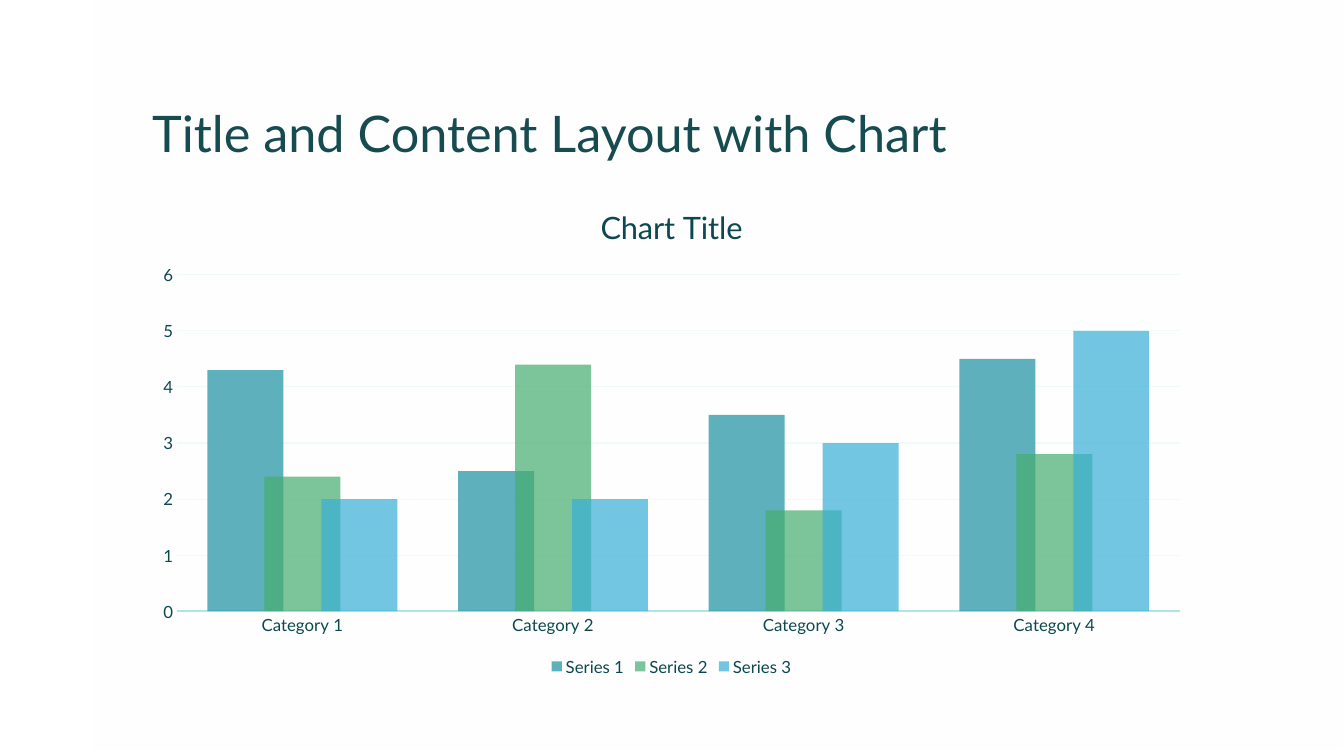
from lxml import etree
from pptx import Presentation
from pptx import util as u
from pptx.chart.data import CategoryChartData
from pptx.dml.color import RGBColor
from pptx.enum import chart as charts, shapes, text
from pptx.oxml.ns import qn

WIDTH, HEIGHT = u.Inches(13.33), u.Inches(7.5)
LEFT, CONTENT_WIDTH = 1.41 / 13.33, 10.5 / 13.33
FONT, TITLE_COLOR, LABEL_COLOR = "Lato", "164B4F", "0D4850"
CATEGORIES = [f"Category {number}" for number in range(1, 5)]
SERIES = [
    ("Series 1", (4.3, 2.5, 3.5, 4.5), "1B91A1"),
    ("Series 2", (2.4, 4.4, 1.8, 2.8), "46AC6F"),
    ("Series 3", (2, 2, 3, 5), "37AFD5"),
]


def color(value):
    return RGBColor.from_string(value)


def box(left, top, width, height):
    return [round(share * side) for share, side in
            zip((left, top, width, height), (WIDTH, HEIGHT) * 2)]


def apply(target, **values):
    for name, value in values.items():
        setattr(target, name, value)


def style_font(font, size, value):
    apply(font, name=FONT, size=u.Pt(size), bold=False)
    font.color.rgb = color(value)


def style_line(line, value, width):
    line.color.rgb = color(value)
    line.width = u.Pt(width)


def set_opacity(color_element, percent):
    alpha = etree.SubElement(color_element, qn("a:alpha"))
    alpha.set("val", str(percent * 1000))


def add_panel(slide):
    panel = slide.shapes.add_shape(
        shapes.MSO_SHAPE.RECTANGLE, *box(0.91 / 13.33, 0, 12.41 / 13.33, 1))
    panel.shadow.inherit = False
    panel.line.fill.background()
    panel.fill.gradient()
    panel.fill.gradient_angle = 270
    for stop, position in zip(panel.fill.gradient_stops, (0, 1)):
        stop.position = position
        stop.color.rgb = color("FFFFFF")
    stop_colors = panel._element.spPr.findall(".//" + qn("a:srgbClr"))
    for stop_color, percent in zip(stop_colors, (60, 0)):
        set_opacity(stop_color, percent)
    slide.shapes._spTree.insert(2, panel._element)


def format_title(title, wording):
    left, top, width, height = box(LEFT, 0.42 / 7.5, CONTENT_WIDTH, 1.25 / 7.5)
    apply(title, left=left, top=top, width=width, height=height)
    frame = title.text_frame
    apply(frame, text=wording, word_wrap=True,
          vertical_anchor=text.MSO_ANCHOR.BOTTOM)
    paragraph = frame.paragraphs[0]
    apply(paragraph, alignment=text.PP_ALIGN.LEFT, line_spacing=0.9)
    style_font(paragraph.runs[0].font, 36, TITLE_COLOR)


def format_axis(axis):
    apply(axis, major_tick_mark=charts.XL_TICK_MARK.NONE,
          minor_tick_mark=charts.XL_TICK_MARK.NONE)
    style_font(axis.tick_labels.font, 12, LABEL_COLOR)


def add_column_chart(slide):
    data = CategoryChartData()
    data.categories = CATEGORIES
    for name, values, _ in SERIES:
        data.add_series(name, values)
    chart = slide.shapes.add_chart(
        charts.XL_CHART_TYPE.COLUMN_CLUSTERED,
        *box(LEFT, 1.83 / 7.5, CONTENT_WIDTH, 4.92 / 7.5), data).chart
    style_font(chart.font, 10, TITLE_COLOR)

    apply(chart, has_title=True, has_legend=True)
    chart.chart_title.include_in_layout = False
    title_frame = chart.chart_title.text_frame
    title_frame.text = "Chart Title"
    style_font(title_frame.paragraphs[0].runs[0].font, 22, LABEL_COLOR)
    apply(chart.legend, position=charts.XL_LEGEND_POSITION.BOTTOM,
          include_in_layout=False)
    style_font(chart.legend.font, 12, LABEL_COLOR)

    for axis in (chart.category_axis, chart.value_axis):
        format_axis(axis)
    style_line(chart.category_axis.format.line, "AFE5E9", 1.25)
    value_axis = chart.value_axis
    apply(value_axis, minimum_scale=0, maximum_scale=6, major_unit=1)
    value_axis.format.line.fill.background()
    style_line(value_axis.major_gridlines.format.line, "EFFAFB", 0.75)

    plot = chart.plots[0]
    apply(plot, gap_width=80, overlap=25, vary_by_categories=False)
    for series, (_, _, value) in zip(plot.series, SERIES):
        series.format.fill.solid()
        series.format.fill.fore_color.rgb = color(value)
        set_opacity(series._element.find(".//" + qn("a:srgbClr")), 70)


def main():
    presentation = Presentation()
    apply(presentation, slide_width=WIDTH, slide_height=HEIGHT)
    slide = presentation.slides.add_slide(presentation.slide_layouts[5])
    slide.background.fill.solid()
    slide.background.fill.fore_color.rgb = color("FFFFFF")
    add_panel(slide)
    format_title(slide.shapes.title, "Title and Content Layout with Chart")
    add_column_chart(slide)
    presentation.save("out.pptx")


if __name__ == "__main__":
    main()
